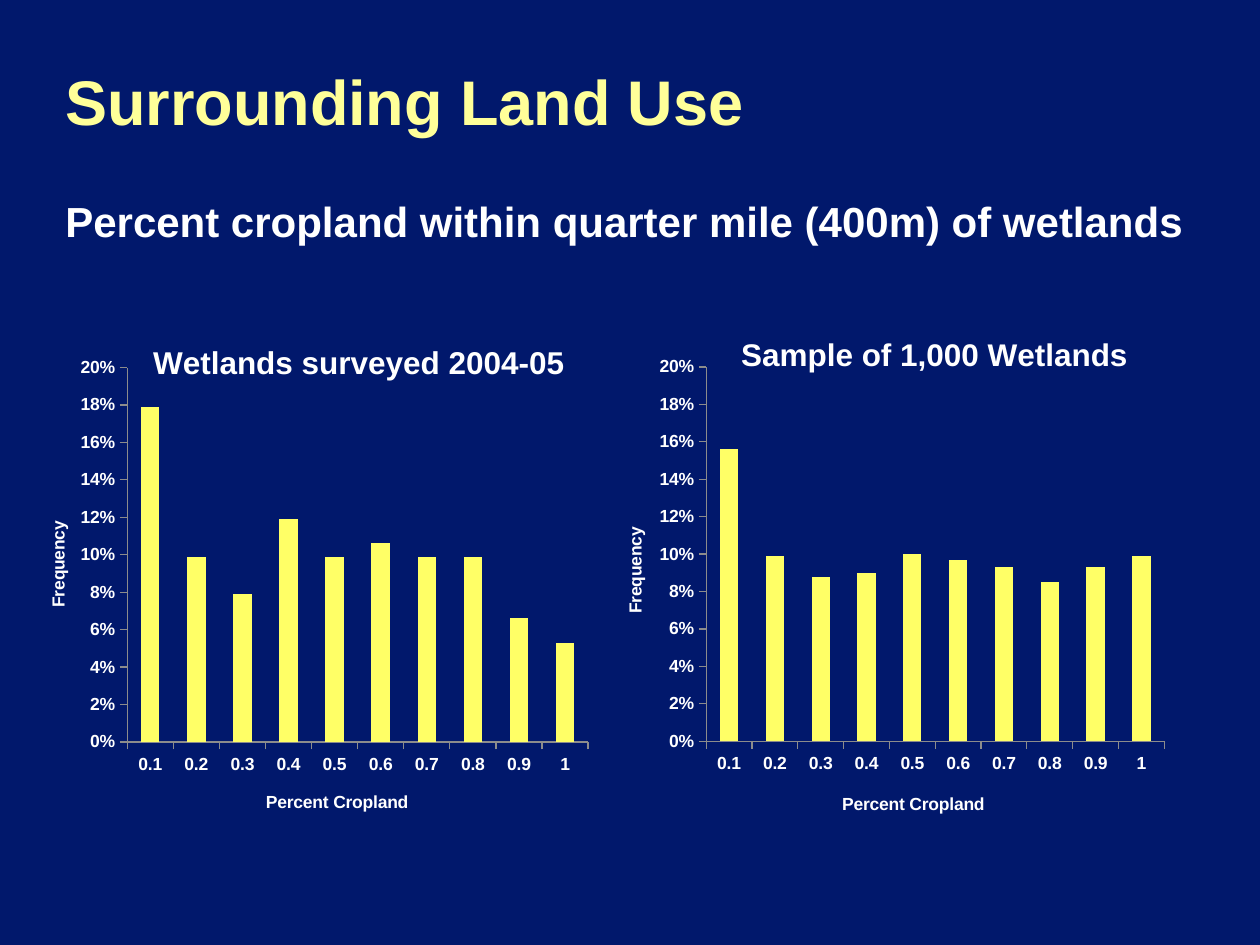
"""Build the surrounding land use slide with its two cropland histograms."""
from pptx import Presentation
from pptx.chart.data import CategoryChartData
from pptx.dml.color import RGBColor
from pptx.enum.chart import XL_CHART_TYPE as ChartType, XL_TICK_MARK as TickMark
from pptx.enum.text import MSO_ANCHOR as Anchor
from pptx.oxml import parse_xml
from pptx.oxml.ns import nsdecls, qn
from pptx.util import Emu, Pt

NAVY = RGBColor(0x01, 0x18, 0x6C)
WHITE = RGBColor(0xFF, 0xFF, 0xFF)
PALE_YELLOW = RGBColor(0xFF, 0xFF, 0x99)
BAR_YELLOW = RGBColor(0xFF, 0xFF, 0x66)
AXIS_GRAY = RGBColor(0x8C, 0x8C, 0x8C)
FONT = "Arial"
EMU_PER_PX = 914400 / 126
CLASSES = ["0.1", "0.2", "0.3", "0.4", "0.5", "0.6", "0.7", "0.8", "0.9", "1"]


def px(length):
    """Turn pixels into EMU."""
    return Emu(round(length * EMU_PER_PX))


def style_font(font, size, color=WHITE):
    """Give a font the bold look of the slide."""
    font.name = FONT
    font.size = Pt(size)
    font.bold = True
    font.color.rgb = color


def write(frame, text, **style):
    """Put one formatted span of text in a text frame."""
    span = frame.paragraphs[0].add_run()
    span.text = text
    style_font(span.font, **style)


def layout_xml(x, y, size=None):
    """Return a manual chart layout, for a plot area if it has a size."""
    parts = [("xMode", "edge"), ("yMode", "edge"), ("x", x), ("y", y)]
    if size:
        parts = [("layoutTarget", "inner"), *parts, ("w", size[0]), ("h", size[1])]
    body = "".join(f'<c:{tag} val="{value}"/>' for tag, value in parts)
    return parse_xml(
        f'<c:layout {nsdecls("c")}><c:manualLayout>{body}</c:manualLayout></c:layout>'
    )


def drop_layout(element):
    """Remove the automatic layout of a chart part."""
    for old in element.findall(qn("c:layout")):
        element.remove(old)


class SlideBuilder:
    """Hold the slide and add its elements in one style."""

    def __init__(self, deck):
        """Add a blank navy slide."""
        self.slide = deck.slides.add_slide(deck.slide_layouts[6])
        fill = self.slide.background.fill
        fill.solid()
        fill.fore_color.rgb = NAVY

    def text(self, text, left, top, width, height, anchor=Anchor.TOP, **style):
        """Add a wrapped text box."""
        box = self.slide.shapes.add_textbox(px(left), px(top), px(width), px(height))
        frame = box.text_frame
        frame.word_wrap = True
        frame.vertical_anchor = anchor
        write(frame, text, **style)

    def chart_title(self, title, text, position, size):
        """Write a chart or axis title at a place given as chart fractions."""
        write(title.text_frame, text, size=size)
        element = title._element
        drop_layout(element)
        element.find(qn("c:tx")).addnext(layout_xml(*position))

    def axis(self, axis, title, position):
        """Style an axis and write its title."""
        axis.has_major_gridlines = False
        axis.major_tick_mark = TickMark.OUTSIDE
        axis.minor_tick_mark = TickMark.NONE
        axis.format.line.color.rgb = AXIS_GRAY
        axis.format.line.width = Pt(0.75)
        style_font(axis.tick_labels.font, 10)
        axis.has_title = True
        self.chart_title(axis.axis_title, title, position, 10)

    def histogram(self, title, frequencies, left, top, width, height, plot, title_at):
        """Add a column chart of wetland frequency by cropland class."""
        data = CategoryChartData(number_format="0%")
        data.categories = CLASSES
        data.add_series("Series 1", frequencies)
        chart = self.slide.shapes.add_chart(
            ChartType.COLUMN_CLUSTERED, px(left), px(top), px(width), px(height), data
        ).chart
        chart.font.name = FONT
        chart.font.size = Pt(10)
        chart.has_legend = False
        chart.has_title = True
        self.chart_title(chart.chart_title, title, title_at, 18)

        self.axis(chart.category_axis, "Percent Cropland", (0.4, 0.95))
        values = chart.value_axis
        self.axis(values, "Frequency", (0.02, 0.49))
        values.minimum_scale, values.maximum_scale = 0, 0.2
        values.major_unit = 0.02
        values.tick_labels.number_format = "0%"
        values.tick_labels.number_format_is_linked = False

        bars = chart.plots[0]
        bars.gap_width = 150
        bars.vary_by_categories = False
        fill = bars.series[0].format.fill
        fill.solid()
        fill.fore_color.rgb = BAR_YELLOW

        area = chart._chartSpace.find(".//" + qn("c:plotArea"))
        drop_layout(area)
        x, y, *size = plot
        area.insert(0, layout_xml(x, y, size))


def main():
    """Build and save the deck."""
    deck = Presentation()
    deck.slide_width, deck.slide_height = px(1260), px(945)
    page = SlideBuilder(deck)
    page.text("Percent cropland within quarter mile (400m) of wetlands",
              53, 189, 1144, 620, size=24)
    page.histogram(
        "Wetlands surveyed 2004-05",
        [0.179, 0.099, 0.079, 0.119, 0.099, 0.106, 0.099, 0.099, 0.066, 0.053],
        32, 231, 577, 587, plot=(0.165, 0.233, 0.799, 0.639), title_at=(0.2, 0.18))
    page.text("Surrounding Land Use", 53, 21, 1144, 158,
              anchor=Anchor.MIDDLE, size=36, color=PALE_YELLOW)
    page.histogram(
        "Sample of 1,000 Wetlands",
        [0.156, 0.099, 0.088, 0.09, 0.1, 0.097, 0.093, 0.085, 0.093, 0.099],
        609, 242, 575, 578, plot=(0.169, 0.217, 0.797, 0.649), title_at=(0.22, 0.15))
    deck.save("out.pptx")


if __name__ == "__main__":
    main()
